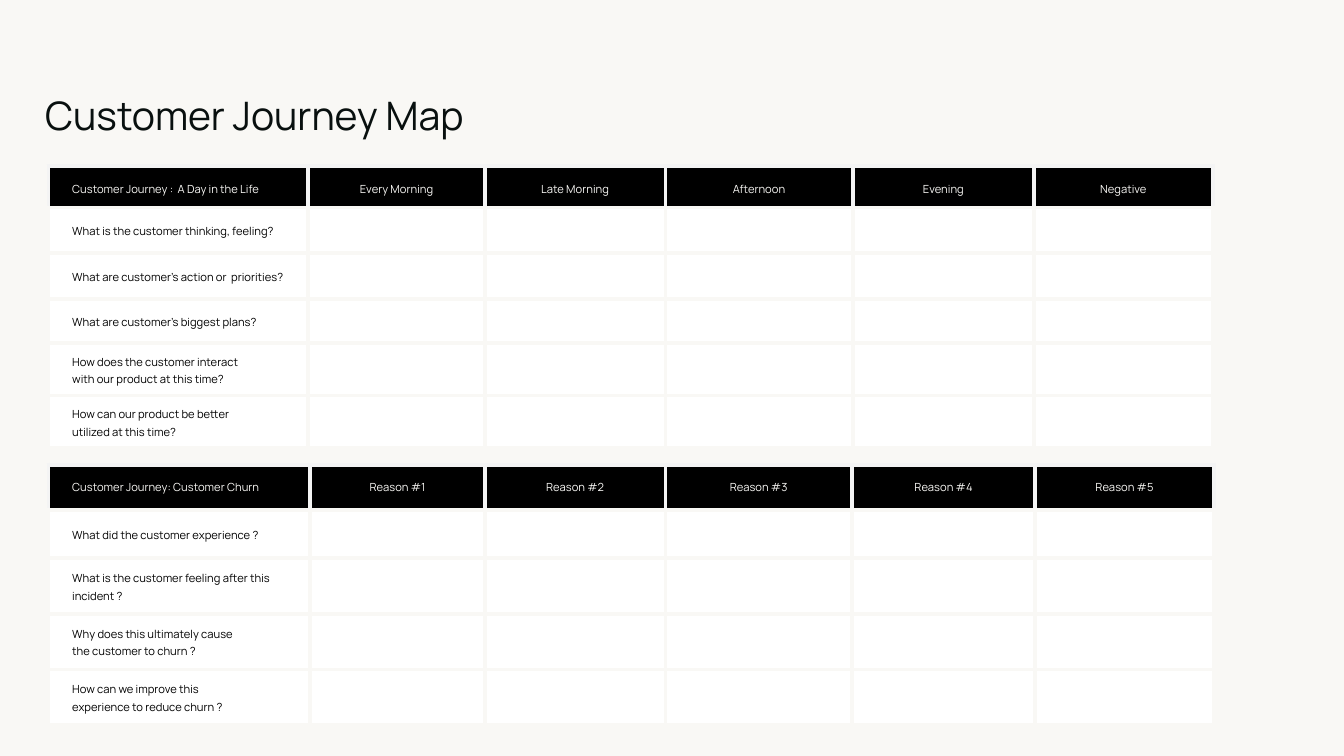
from dataclasses import dataclass

from lxml import etree
from pptx import Presentation
from pptx import util as u
from pptx.dml import color as c
from pptx.enum import text as t
from pptx.oxml import ns


@dataclass(frozen=True)
class Theme:
    font: str = "Manrope"
    paper: str = "F9F8F5"
    header: str = "000000"
    header_edge: str = "F4F4F4"
    cell: str = "FFFFFF"
    ink: str = "000000"
    title_ink: str = "09100F"
    title_size: int = 28
    table_size: int = 8
    edge_width: int = 3


THEME = Theme()

DAY = {
    "top": 4.19,
    "inset": 0.2,
    "header_spacing": 1.32,
    "cols": [6.55, 4.45, 4.55, 4.72, 4.57, 4.5],
    "rows": [1.04, 1.14, 1.16, 1.12, 1.32, 1.32],
    "header": ["Customer Journey :  A Day in the Life", "Every Morning",
               "Late Morning", "Afternoon", "Evening", "Negative"],
    "questions": [
        "What is the customer thinking, feeling?",
        "What are customer’s action or  priorities?",
        "What are customer’s biggest plans?",
        "How does the customer interact\nwith our product at this time?",
        "How can our product be better\nutilized at this time?",
    ],
}

CHURN = {
    "top": 11.71,
    "inset": 0.25,
    "header_spacing": 1.0,
    "cols": [6.6, 4.4, 4.55, 4.7, 4.62, 4.5],
    "rows": [1.14, 1.22, 1.4, 1.4, 1.36],
    "header": ["Customer Journey: Customer Churn"]
              + [f"Reason #{n}" for n in range(1, 6)],
    "questions": [
        "What did the customer experience ?",
        "What is the customer feeling after this incident ?",
        "Why does this ultimately cause\nthe customer to churn ?",
        "How can we improve this\nexperience to reduce churn ?",
    ],
}


def apply(obj, values):
    for name, value in values.items():
        setattr(obj, name, value)


def paint(obj, rgb):
    obj.fill.solid()
    obj.fill.fore_color.rgb = c.RGBColor.from_string(rgb)


def write(tf, content, size, rgb, **paragraph_format):
    for i, line in enumerate(content.split("\n")):
        p = tf.add_paragraph() if i else tf.paragraphs[0]
        apply(p, paragraph_format)
        r = p.add_run()
        r.text = line
        apply(r.font, {"name": THEME.font, "size": u.Pt(size), "bold": False})
        r.font.color.rgb = c.RGBColor.from_string(rgb)


def add_edges(cell, side_rgb):
    props = cell._tc.get_or_add_tcPr()
    edges = {"lnL": side_rgb, "lnR": side_rgb, "lnT": side_rgb, "lnB": THEME.paper}
    for i, (tag, rgb) in enumerate(edges.items()):
        ln = etree.Element(ns.qn(f"a:{tag}"), w=str(u.Pt(THEME.edge_width)))
        fill = etree.SubElement(ln, ns.qn("a:solidFill"))
        etree.SubElement(fill, ns.qn("a:srgbClr"), val=rgb)
        props.insert(i, ln)


def add_title(s, content):
    sp = s.shapes.title
    apply(sp, {"left": u.Cm(1.14), "top": u.Cm(2.31),
               "width": u.Cm(23.44), "height": u.Cm(1.3)})
    paint(sp, THEME.paper)
    tf = sp.text_frame
    apply(tf, {"margin_left": 0, "margin_top": 0, "margin_right": 0,
               "margin_bottom": 0, "word_wrap": True,
               "auto_size": t.MSO_AUTO_SIZE.NONE,
               "vertical_anchor": t.MSO_ANCHOR.TOP})
    write(tf, content, THEME.title_size, THEME.title_ink,
          alignment=t.PP_ALIGN.LEFT, line_spacing=1.0,
          space_before=u.Pt(0), space_after=u.Pt(10))


def fill_cell(cell, content, row, col, journey):
    is_header = row == 0
    inset = u.Cm(journey["inset"])
    apply(cell, {"margin_left": inset if col else u.Cm(0.6),
                 "margin_top": inset, "margin_right": inset,
                 "margin_bottom": inset,
                 "vertical_anchor": t.MSO_ANCHOR.MIDDLE})
    paint(cell, THEME.header if is_header else THEME.cell)
    add_edges(cell, THEME.header_edge if is_header else THEME.paper)
    write(cell.text_frame, content, THEME.table_size,
          THEME.paper if is_header else THEME.ink,
          alignment=t.PP_ALIGN.CENTER if col else t.PP_ALIGN.LEFT,
          line_spacing=journey["header_spacing"] if is_header else 1.15)


def add_journey(s, journey):
    cols, rows = journey["cols"], journey["rows"]
    table = s.shapes.add_table(
        len(rows), len(cols), u.Cm(1.22), u.Cm(journey["top"]),
        u.Cm(sum(cols)), u.Cm(sum(rows))).table
    apply(table, {"first_row": False, "horz_banding": False})
    for column, width in zip(table.columns, cols):
        column.width = u.Cm(width)
    for row, height in zip(table.rows, rows):
        row.height = u.Cm(height)
    blanks = [""] * (len(cols) - 1)
    grid = [journey["header"]] + [[q] + blanks for q in journey["questions"]]
    for i, line in enumerate(grid):
        for j, content in enumerate(line):
            fill_cell(table.cell(i, j), content, i, j, journey)


def main():
    prs = Presentation()
    apply(prs, {"slide_width": u.Cm(33.87), "slide_height": u.Cm(19.05)})
    s = prs.slides.add_slide(prs.slide_layouts.get_by_name("Title Only"))
    paint(s.background, THEME.paper)
    add_title(s, "Customer Journey Map")
    for journey in (DAY, CHURN):
        add_journey(s, journey)
    prs.save("out.pptx")


if __name__ == "__main__":
    main()
